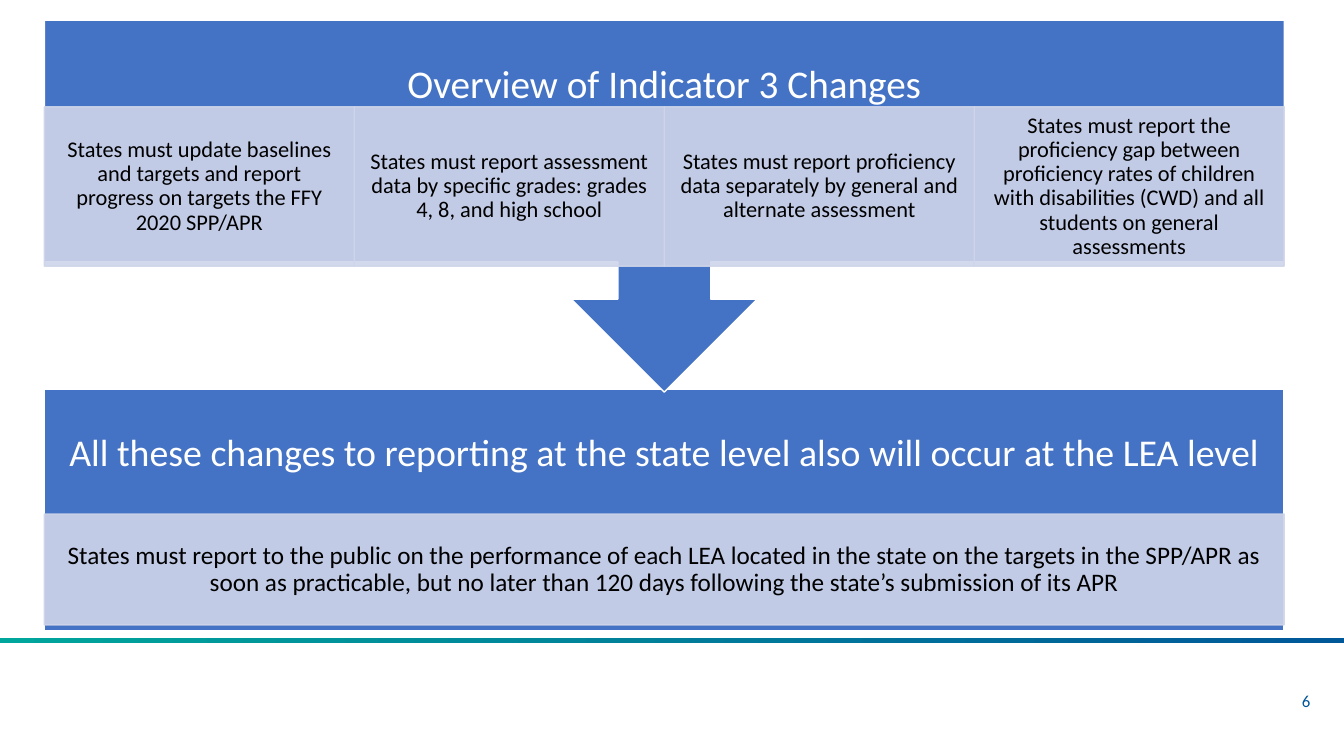
"""Build the slide on Indicator 3 reporting changes."""
from pptx import Presentation
from pptx.dml.color import RGBColor
from pptx.enum import shapes, text
from pptx.oxml import ns, xmlchemy
from pptx.util import Pt

COLORS = {
    "block": "4472C4", "panel": "CFD5EA", "white": "FFFFFF", "black": "000000",
    "teal": "00A59B", "navy": "005899", "number": "01579B",
}
LEFT, WIDTH = 31.68, 885.6


def add_block(preset, left, top, width, height, fill, line, opacity=100):
    block = slide.shapes.add_shape(preset, Pt(left), Pt(top), Pt(width), Pt(height))
    block.shadow.inherit = False
    block.fill.solid()
    block.fill.fore_color.rgb = RGBColor.from_string(COLORS[fill])
    block.line.color.rgb = RGBColor.from_string(COLORS[line])
    block.line.width = Pt(1)
    if opacity < 100:
        for color in block.element.spPr.iter(ns.qn("a:srgbClr")):
            alpha = xmlchemy.OxmlElement("a:alpha")
            alpha.set("val", str(opacity * 1000))
            color.append(alpha)
    return block


def write(holder, wording, size, color, insets, align=text.PP_ALIGN.CENTER, spacing=0.9):
    frame = holder.text_frame
    frame.word_wrap = True
    frame.auto_size = text.MSO_AUTO_SIZE.NONE
    frame.vertical_anchor = text.MSO_ANCHOR.MIDDLE
    frame.margin_left, frame.margin_top, frame.margin_right, frame.margin_bottom = map(Pt, insets)
    paragraph = frame.paragraphs[0]
    paragraph.alignment = align
    paragraph.line_spacing = spacing
    run = paragraph.add_run()
    run.text = wording
    run.font.name = "Calibri"
    run.font.size = Pt(size)
    run.font.color.rgb = RGBColor.from_string(COLORS[color])


deck = Presentation()
deck.slide_width, deck.slide_height = Pt(960), Pt(540)
slide = deck.slides.add_slide(deck.slide_layouts[5])
rectangle = shapes.MSO_SHAPE.RECTANGLE

divider = slide.shapes.add_shape(rectangle, 0, Pt(455.8), Pt(960), Pt(3.6))
divider.shadow.inherit = False
divider.line.fill.background()
divider.fill.gradient()
divider.fill.gradient_angle = 0
for stop, name in zip(divider.fill.gradient_stops, ("teal", "navy")):
    stop.color.rgb = RGBColor.from_string(COLORS[name])

page_number = slide.shapes.add_textbox(Pt(909.4), Pt(480.2), Pt(33.8), Pt(40.3))
write(page_number, "6", 12, "number", (7.2, 3.6, 7.2, 3.6), text.PP_ALIGN.RIGHT, 1.0)

lea_level = add_block(rectangle, LEFT, 277.9, WIDTH, 172.8, "block", "white")
write(lea_level, "All these changes to reporting at the state level also will occur at the LEA level",
      27, "white", (15, 15, 15, 94.2))

public_report = add_block(rectangle, LEFT, 367.2, WIDTH, 79.2, "panel", "panel", 90)
write(public_report,
      "States must report to the public on the performance of each LEA located in the state "
      "on the targets in the SPP/APR as soon as practicable, but no later than 120 days "
      "following the state’s submission of its APR",
      18, "black", (10, 2, 10, 2))

overview = add_block(shapes.MSO_SHAPE.UP_ARROW_CALLOUT, LEFT, 14.4, WIDTH, 265.7, "block", "white")
overview.rotation = 180

title = slide.shapes.title
title.left, title.top, title.width, title.height = Pt(LEFT), Pt(14.4), Pt(WIDTH), Pt(93.6)
write(title, "Overview of Indicator 3 Changes", 28, "white", (16, 16, 16, 16))
overview.element.addnext(title.element)

changes = [
    "States must update baselines and targets and report progress on targets the FFY 2020 SPP/APR",
    "States must report assessment data by specific grades: grades 4, 8, and high school",
    "States must report proficiency data separately by general and alternate assessment",
    "States must report the proficiency gap between proficiency rates of children with "
    "disabilities (CWD) and all students on general assessments",
]
change_width = WIDTH / len(changes)
for column, wording in enumerate(changes):
    change = add_block(rectangle, LEFT + column * change_width, 76.3, change_width, 113.8,
                       "panel", "panel", 90)
    write(change, wording, 16, "black", (8.6, 1.5, 8.6, 1.5))

deck.save("out.pptx")
